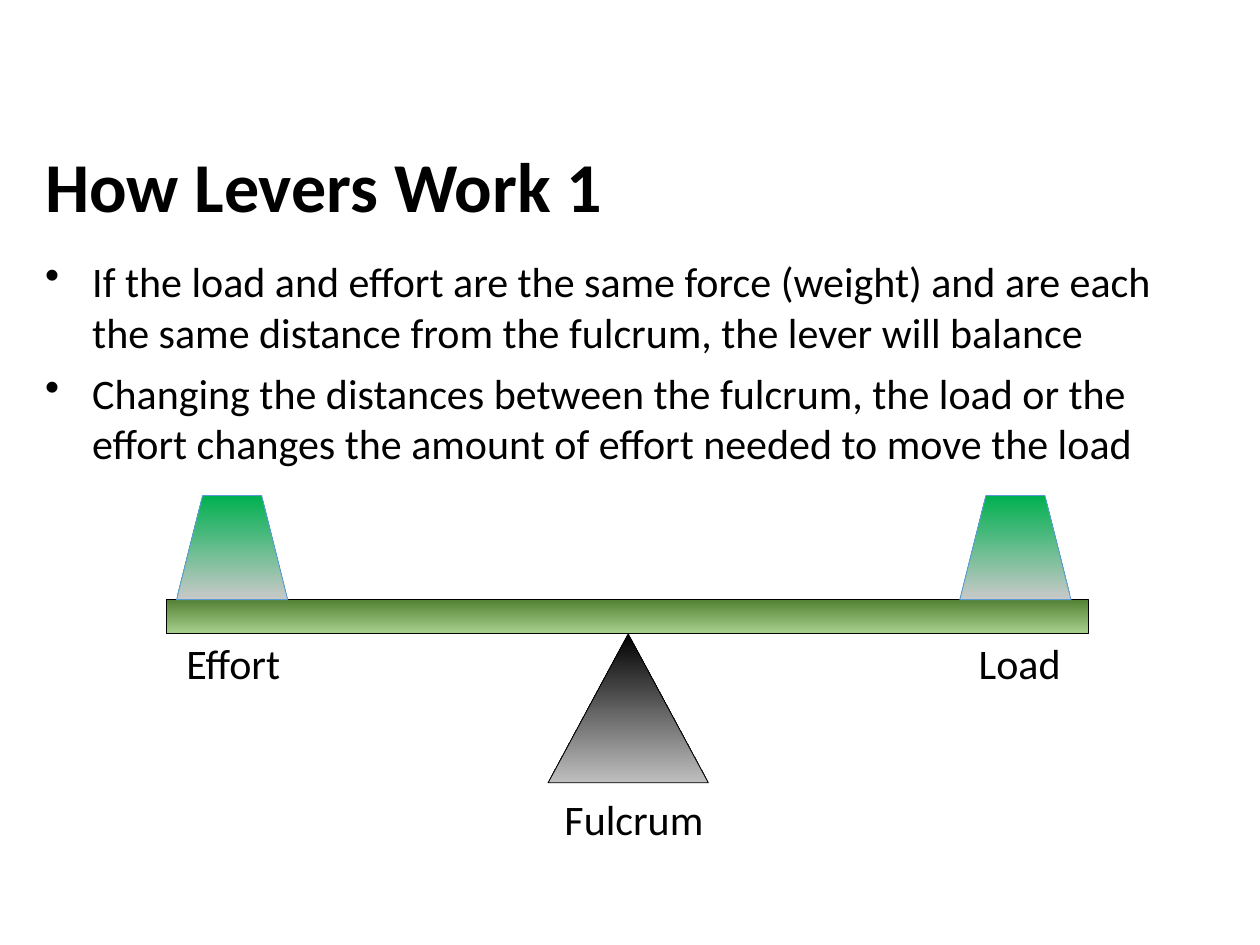
"""Build a slide that explains how a balanced lever works."""
from dataclasses import dataclass

from lxml import etree
from pptx import Presentation
from pptx.dml.color import RGBColor
from pptx.enum.shapes import MSO_SHAPE
from pptx.enum.text import MSO_AUTO_SIZE
from pptx.oxml.ns import qn
from pptx.util import Cm, Pt

RECTANGLE = MSO_SHAPE.RECTANGLE
TRIANGLE = MSO_SHAPE.ISOSCELES_TRIANGLE
TRAPEZOID = MSO_SHAPE.TRAPEZOID
FIT_SHAPE = MSO_AUTO_SIZE.SHAPE_TO_FIT_TEXT


@dataclass(frozen=True)
class Theme:
    font: str = "Calibri"
    title_size: int = 40
    text_size: int = 24
    ink: str = "000000"
    beam: tuple = ("548235", "A9D18E")
    fulcrum: tuple = ("000000", "BFBFBF")
    weight: tuple = ("00B050", "C9C9C9")
    weight_line: str = "5B9BD5"
    line_width: float = 0.5


THEME = Theme()
TITLE = "How Levers Work 1"
POINTS = [
    "If the load and effort are the same force (weight) and are each "
    "the same distance from the fulcrum, the lever will balance",
    "Changing the distances between the fulcrum, the load or the "
    "effort changes the amount of effort needed to move the load",
]
TITLE_AREA = (0.66, 2.74, 18.01, 1.96)
POINTS_AREA = (0.66, 5.03, 22.99, 4.57)
LABEL_SIZE = (4.17, 1.27)
LABELS = [("Fulcrum", 11.13, 15.88), ("Load", 19.48, 12.73), ("Effort", 3.51, 12.73)]
BEAM_LEFT, BEAM_TOP, BEAM_WIDTH, BEAM_HEIGHT = 3.35, 12.09, 18.59, 0.69
FULCRUM_LEFT, FULCRUM_WIDTH, FULCRUM_HEIGHT = 11.05, 3.23, 3.0
WEIGHT_LEFTS = (3.56, 19.35)
WEIGHT_WIDTH, WEIGHT_HEIGHT = 2.24, 2.1
BULLET_INDENT = 0.95


def add_text(shapes, area, lines, size, bold=False, space_after=0, bullet=False):
    box = shapes.add_textbox(*map(Cm, area))
    frame = box.text_frame
    frame.word_wrap = True
    frame.auto_size = FIT_SHAPE
    for index, line in enumerate(lines):
        para = frame.add_paragraph() if index else frame.paragraphs[0]
        para.text = line
        if bullet:
            properties = para._p.get_or_add_pPr()
            properties.set("marL", str(Cm(BULLET_INDENT)))
            properties.set("indent", str(-Cm(BULLET_INDENT)))
            etree.SubElement(properties, qn("a:buChar"), char="•")
        para.space_after = Pt(space_after)
        para.font.name = THEME.font
        para.font.size = Pt(size)
        para.font.bold = bold
        para.font.color.rgb = RGBColor.from_string(THEME.ink)


def add_part(shapes, kind, area, colours, line_colour):
    part = shapes.add_shape(kind, *map(Cm, area))
    part.shadow.inherit = False
    part.fill.gradient()
    part.fill.gradient_angle = 270
    for stop, colour in zip(part.fill.gradient_stops, colours):
        stop.color.rgb = RGBColor.from_string(colour)
    part.line.color.rgb = RGBColor.from_string(line_colour)
    part.line.width = Pt(THEME.line_width)


def add_lever(shapes):
    fulcrum = (FULCRUM_LEFT, BEAM_TOP + BEAM_HEIGHT, FULCRUM_WIDTH, FULCRUM_HEIGHT)
    beam = (BEAM_LEFT, BEAM_TOP, BEAM_WIDTH, BEAM_HEIGHT)
    add_part(shapes, TRIANGLE, fulcrum, THEME.fulcrum, THEME.ink)
    add_part(shapes, RECTANGLE, beam, THEME.beam, THEME.ink)
    for left in WEIGHT_LEFTS:
        weight = (left, BEAM_TOP - WEIGHT_HEIGHT, WEIGHT_WIDTH, WEIGHT_HEIGHT)
        add_part(shapes, TRAPEZOID, weight, THEME.weight, THEME.weight_line)
    for label, left, top in LABELS:
        add_text(shapes, (left, top, *LABEL_SIZE), [label], THEME.text_size, space_after=6)


def main():
    deck = Presentation()
    deck.slide_width, deck.slide_height = Cm(25.4), Cm(19.05)
    page = deck.slides.add_slide(deck.slide_layouts[6])
    add_text(page.shapes, TITLE_AREA, [TITLE], THEME.title_size, bold=True)
    add_lever(page.shapes.add_group_shape().shapes)
    add_text(page.shapes, POINTS_AREA, POINTS, THEME.text_size, space_after=6, bullet=True)
    deck.save("out.pptx")


if __name__ == "__main__":
    main()
